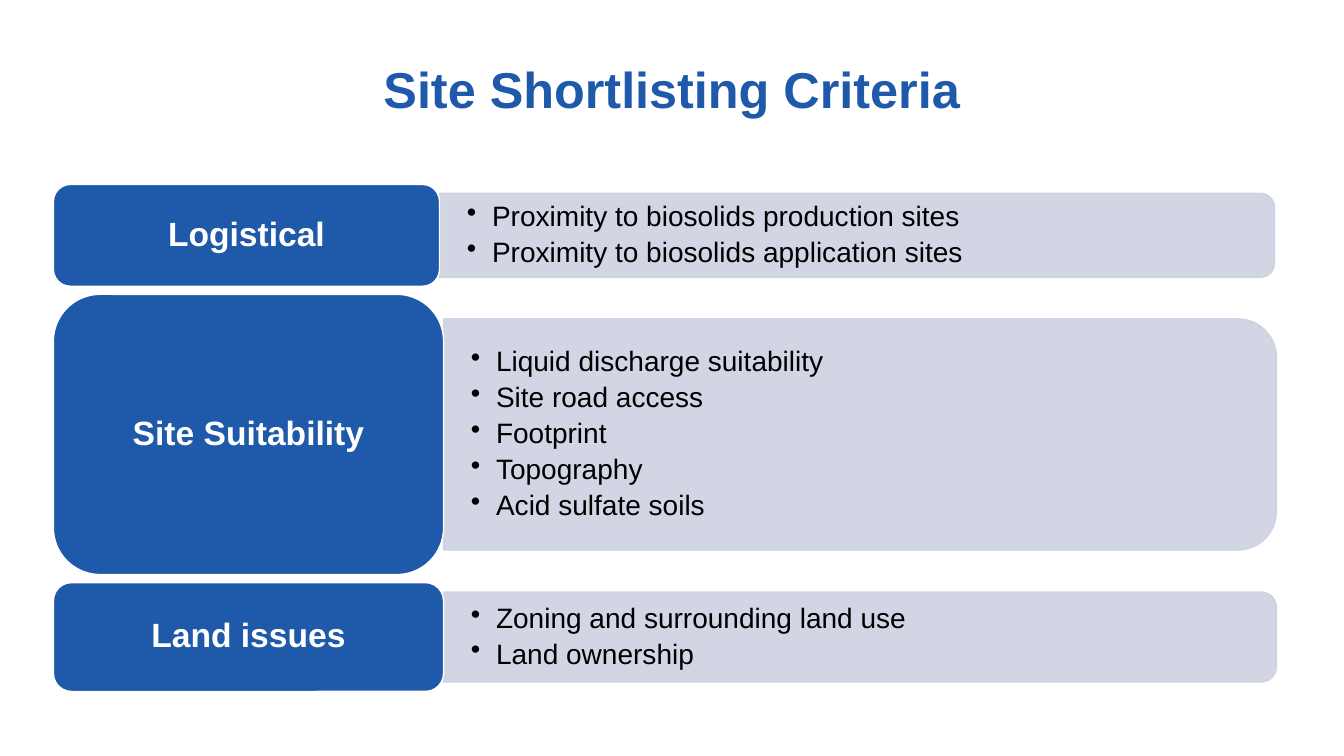
import pptx
import pptx.util
import pptx.dml.color
import pptx.enum.shapes
import pptx.enum.text
import pptx.oxml.ns
import lxml.etree

Inches = pptx.util.Inches
Pt = pptx.util.Pt
SHAPES = pptx.enum.shapes.MSO_SHAPE
ALIGN = pptx.enum.text.PP_ALIGN
ANCHOR = pptx.enum.text.MSO_ANCHOR

COLOURS = {"blue": "1F59A9", "panel": "CDD1E2", "white": "FFFFFF", "black": "000000"}

# Heading, label width, label height, panel width, criteria
CRITERIA = [
    ("Logistical", 3.83, 1.01, 8.28,
     ["Proximity to biosolids production sites",
      "Proximity to biosolids application sites"]),
    ("Site Suitability", 3.87, 2.78, 8.26,
     ["Liquid discharge suitability", "Site road access", "Footprint",
      "Topography", "Acid sulfate soils"]),
    ("Land issues", 3.87, 1.08, 8.26,
     ["Zoning and surrounding land use", "Land ownership"]),
]
LEFT, TOP, GAP = 0.53, 1.83, 0.08
PANEL_SHARE = 0.825  # panel height as a share of label height


class SlideBuilder:
    def __init__(self, slide, font_name="Arial"):
        self.slide = slide
        self.font_name = font_name

    def colour(self, name):
        return pptx.dml.color.RGBColor.from_string(COLOURS[name])

    def style(self, paragraph, size, colour, bold=False):
        paragraph.font.name = self.font_name
        paragraph.font.size = Pt(size)
        paragraph.font.bold = bold
        paragraph.font.color.rgb = self.colour(colour)

    def title(self, text, left, top, width, height):
        shape = self.slide.shapes.title
        shape.left, shape.top = Inches(left), Inches(top)
        shape.width, shape.height = Inches(width), Inches(height)
        frame = shape.text_frame
        frame.text = text
        frame.auto_size = pptx.enum.text.MSO_AUTO_SIZE.NONE
        frame.vertical_anchor = ANCHOR.TOP
        paragraph = frame.paragraphs[0]
        paragraph.alignment = ALIGN.CENTER
        self.style(paragraph, 36, "blue", bold=True)

    def block(self, preset, left, top, width, height, fill, line):
        shape = self.slide.shapes.add_shape(
            preset, Inches(left), Inches(top), Inches(width), Inches(height))
        shape.shadow.inherit = False
        shape.fill.solid()
        shape.fill.fore_color.rgb = self.colour(fill)
        shape.line.color.rgb = self.colour(line)
        shape.line.width = Pt(1)
        return shape

    def panel(self, left, middle, width, height):
        # Turned a quarter so that the rounded corners face right
        shape = self.block(SHAPES.ROUND_2_SAME_RECTANGLE,
                           left + (width - height) / 2, middle - width / 2,
                           height, width, "panel", "panel")
        shape.rotation = 90
        tag = pptx.oxml.ns.qn("a:alpha")
        for colour in shape._element.spPr.iter(pptx.oxml.ns.qn("a:srgbClr")):
            lxml.etree.SubElement(colour, tag).set("val", "90000")

    def label(self, text, left, top, width, height):
        shape = self.block(SHAPES.ROUNDED_RECTANGLE, left, top, width, height,
                           "blue", "white")
        frame = shape.text_frame
        frame.text = text
        frame.vertical_anchor = ANCHOR.MIDDLE
        paragraph = frame.paragraphs[0]
        paragraph.alignment = ALIGN.CENTER
        paragraph.line_spacing = 0.9
        self.style(paragraph, 24, "white", bold=True)

    def bullets(self, items, left, top, width, height):
        box = self.slide.shapes.add_textbox(
            Inches(left), Inches(top), Inches(width), Inches(height))
        frame = box.text_frame
        frame.word_wrap = True
        frame.vertical_anchor = ANCHOR.MIDDLE
        frame.margin_left = frame.margin_right = Inches(0.27)
        frame.margin_top = frame.margin_bottom = Inches(0.14)
        frame.text = "\n".join(items)
        for paragraph in frame.paragraphs:
            properties = paragraph._p.get_or_add_pPr()
            properties.set("marL", str(Inches(0.25)))
            properties.set("indent", str(-Inches(0.25)))
            bullet = lxml.etree.SubElement(properties, pptx.oxml.ns.qn("a:buChar"))
            bullet.set("char", "•")
            paragraph.line_spacing = 0.9
            paragraph.space_after = Pt(4)
            self.style(paragraph, 20, "black")


def main():
    presentation = pptx.Presentation()
    presentation.slide_width = Inches(13.33)
    presentation.slide_height = Inches(7.5)
    slide = presentation.slides.add_slide(presentation.slide_layouts[5])
    builder = SlideBuilder(slide)

    builder.title("Site Shortlisting Criteria", 2.48, 0.53, 8.37, 0.71)

    # One row per group of criteria, stacked with equal gaps
    top = TOP
    for heading, label_width, label_height, panel_width, items in CRITERIA:
        panel_left = LEFT + label_width
        panel_height = label_height * PANEL_SHARE
        middle = top + label_height / 2
        builder.panel(panel_left, middle, panel_width, panel_height)
        builder.bullets(items, panel_left, middle - panel_height / 2,
                        panel_width, panel_height)
        builder.label(heading, LEFT, top, label_width, label_height)
        top += label_height + GAP

    presentation.save("out.pptx")


if __name__ == "__main__":
    main()
